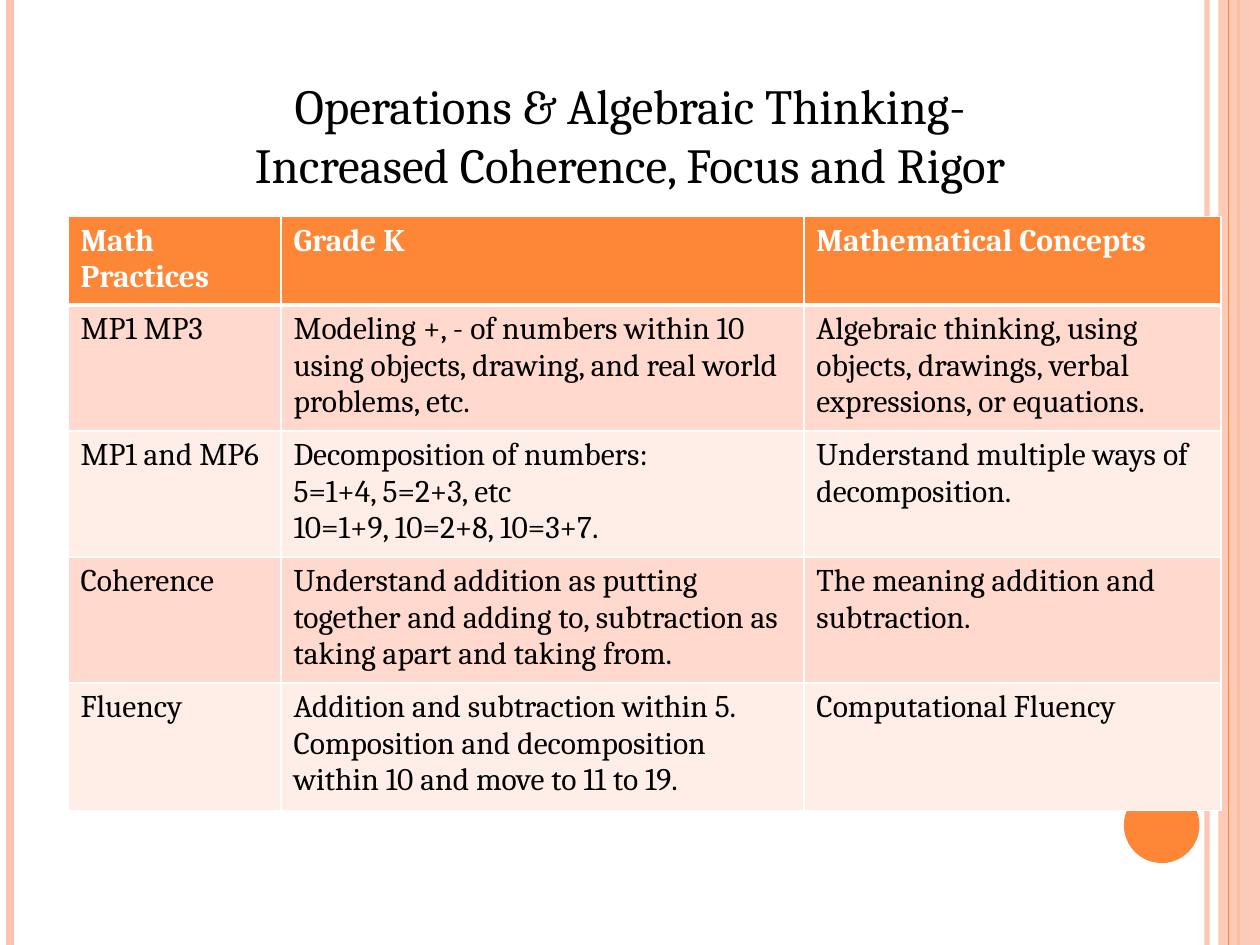
from dataclasses import dataclass

from lxml import etree
from pptx import Presentation
from pptx.dml.color import RGBColor
from pptx.enum import shapes, text
from pptx.oxml import ns
from pptx.util import Inches, Pt


@dataclass(frozen=True)
class Theme:
    font: str = "Cambria"
    title_size: float = 28
    table_size: float = 18
    accent: str = "FE8637"
    soft: str = "FEC3AE"
    band_dark: str = "FFD9CE"
    band_light: str = "FFEDE8"
    ink: str = "000000"
    paper: str = "FFFFFF"


THEME = Theme()

COLUMN_WIDTHS = (1.69, 4.15, 3.31)
ROW_HEIGHTS = (0.66, 0.97, 0.97, 0.97, 1.01)
ROWS = (
    ("Math Practices", "Grade K", "Mathematical Concepts"),
    ("MP1 MP3",
     "Modeling +, - of numbers within 10 using objects, drawing, and real world problems, etc.",
     "Algebraic thinking, using objects, drawings, verbal expressions, or equations."),
    ("MP1 and MP6",
     "Decomposition of numbers:\n5=1+4, 5=2+3, etc\n10=1+9, 10=2+8, 10=3+7.",
     "Understand multiple ways of decomposition."),
    ("Coherence",
     "Understand addition as putting together and adding to, subtraction as "
     "taking apart and taking from.",
     "The meaning addition and subtraction."),
    ("Fluency",
     "Addition and subtraction within 5.\n"
     "Composition and decomposition within 10 and move to 11 to 19.",
     "Computational Fluency"),
)


def rgb(color):
    return RGBColor.from_string(color)


def write(frame, words, *, size, color=THEME.ink, bold=False, align=None):
    """Fill a text frame, one paragraph for each line of words."""
    frame.word_wrap = True
    for index, line in enumerate(words.split("\n")):
        para = frame.paragraphs[0] if index == 0 else frame.add_paragraph()
        para.alignment = align
        span = para.add_run()
        span.text = line
        span.font.name = THEME.font
        span.font.size = Pt(size)
        span.font.bold = bold
        span.font.color.rgb = rgb(color)


def set_alpha(element, percent):
    for color in element.iter(ns.qn("a:srgbClr")):
        etree.SubElement(color, ns.qn("a:alpha"), val=str(percent * 1000))


def add_stripe(page, x, top, height, color, width, alpha=None):
    line = page.shapes.add_connector(
        shapes.MSO_CONNECTOR.STRAIGHT,
        Inches(x), Inches(top), Inches(x), Inches(top + height))
    line.line.color.rgb = rgb(color)
    line.line.width = Pt(width)
    properties = line._element.spPr
    if alpha:
        set_alpha(properties, alpha)
    etree.SubElement(properties, ns.qn("a:effectLst"))


def add_plain_shape(page, kind, left, top, width, height, color, alpha=None):
    shape = page.shapes.add_shape(
        kind, Inches(left), Inches(top), Inches(width), Inches(height))
    shape.shadow.inherit = False
    shape.fill.solid()
    shape.fill.fore_color.rgb = rgb(color)
    shape.line.fill.background()
    if alpha:
        set_alpha(shape._element.spPr, alpha)


def add_frame(page, left, top, width, height):
    """Draw the edge stripes, the right-hand band and the disc."""
    right = left + width
    add_stripe(page, right - 0.42, top, height, THEME.soft, 3, alpha=93)
    add_stripe(page, left + 0.08, top, height, THEME.soft, 4.5)
    add_stripe(page, right - 0.17, top, height, THEME.accent, 1.5)
    add_plain_shape(page, shapes.MSO_SHAPE.RECTANGLE,
                    right - 0.33, top, 0.33, height, THEME.soft, alpha=87)
    add_stripe(page, right - 0.25, top, height, THEME.accent, 0.75)
    add_plain_shape(page, shapes.MSO_SHAPE.OVAL,
                    right - 1.08, top + height - 1.25, 0.6, 0.6, THEME.accent)


def add_title(page, left, top, width, height):
    box = page.shapes.add_textbox(
        Inches(left), Inches(top), Inches(width), Inches(height))
    box.text_frame.vertical_anchor = text.MSO_ANCHOR.TOP
    write(box.text_frame,
          "Operations & Algebraic Thinking-\nIncreased Coherence, Focus and Rigor",
          size=THEME.title_size, align=text.PP_ALIGN.CENTER)


def set_borders(cell, **widths):
    """Draw white cell edges; the fill must be set afterwards."""
    properties = cell._tc.get_or_add_tcPr()
    for side, width in widths.items():
        edge = etree.SubElement(properties, ns.qn(f"a:ln{side}"), w=str(Pt(width)))
        fill = etree.SubElement(edge, ns.qn("a:solidFill"))
        etree.SubElement(fill, ns.qn("a:srgbClr"), val=THEME.paper)


def add_standards_table(page, left, top, width, height):
    table = page.shapes.add_table(
        len(ROWS), len(COLUMN_WIDTHS),
        Inches(left), Inches(top), Inches(width), Inches(height)).table
    for column, share in zip(table.columns, COLUMN_WIDTHS):
        column.width = Inches(width * share / sum(COLUMN_WIDTHS))
    for row, share in zip(table.rows, ROW_HEIGHTS):
        row.height = Inches(height * share / sum(ROW_HEIGHTS))
    bands = (THEME.band_light, THEME.band_dark)
    for r, entries in enumerate(ROWS):
        header = r == 0
        for c, words in enumerate(entries):
            cell = table.cell(r, c)
            set_borders(cell, L=1, R=1, T=3 if r == 1 else 1, B=3 if header else 1)
            cell.fill.solid()
            cell.fill.fore_color.rgb = rgb(THEME.accent if header else bands[r % 2])
            write(cell.text_frame, words, size=THEME.table_size, bold=header,
                  color=THEME.paper if header else THEME.ink)


def main():
    deck = Presentation()
    deck.slide_width, deck.slide_height = Inches(10), Inches(7.5)
    page = deck.slides.add_slide(deck.slide_layouts[6])
    page.background.fill.solid()
    page.background.fill.fore_color.rgb = rgb(THEME.paper)
    add_frame(page, 0, 0, 10, 7.5)
    add_title(page, 1, 0.55, 8, 0.95)
    add_standards_table(page, 0.54, 1.72, sum(COLUMN_WIDTHS), sum(ROW_HEIGHTS))
    deck.save("out.pptx")


if __name__ == "__main__":
    main()
